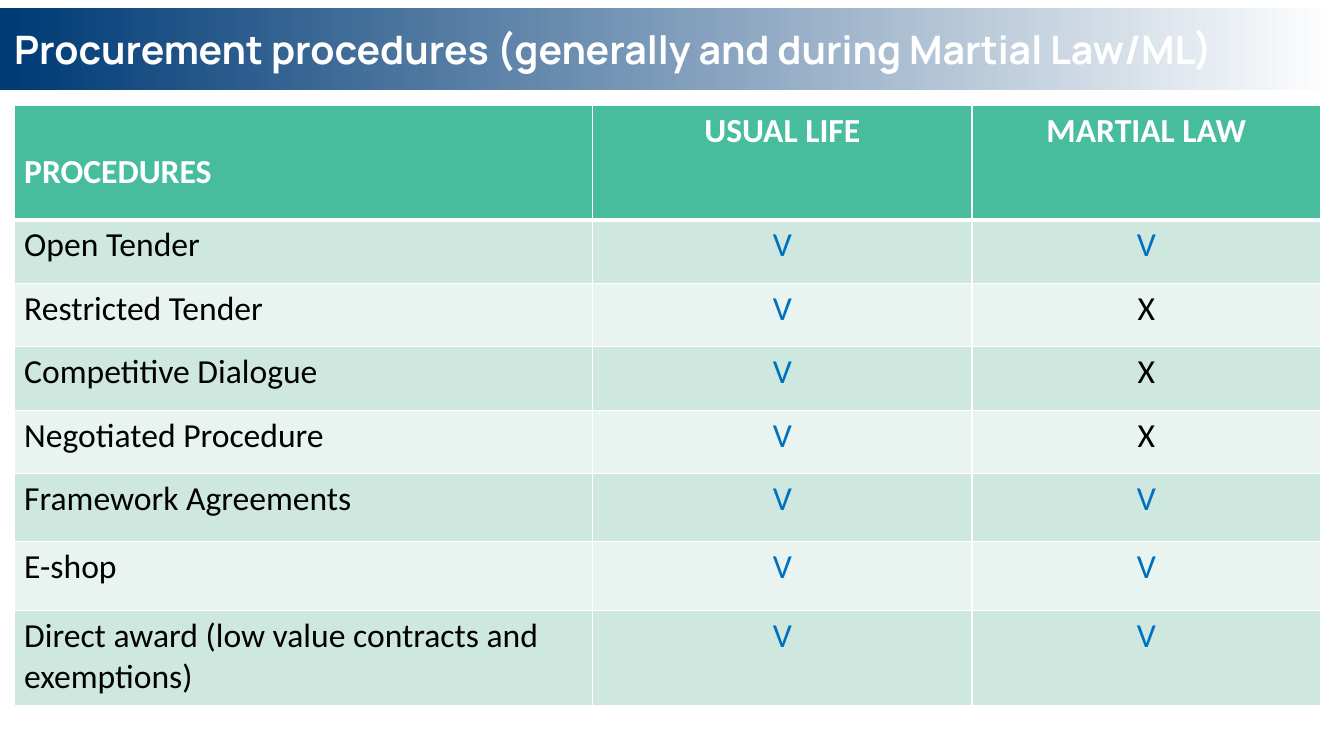
import pptx
import pptx.dml.color
import pptx.enum.shapes
import pptx.enum.text
import pptx.oxml
import pptx.oxml.ns
import pptx.util

RGBColor = pptx.dml.color.RGBColor
NAVY = RGBColor(0x00, 0x3B, 0x76)
WHITE = RGBColor(0xFF, 0xFF, 0xFF)
BLACK = RGBColor(0x00, 0x00, 0x00)
BLUE = RGBColor(0x00, 0x70, 0xC0)
GREEN = RGBColor(0x48, 0xBD, 0x9E)
MINT = RGBColor(0xCF, 0xE8, 0xDF)
PALE_MINT = RGBColor(0xE9, 0xF4, 0xF0)

EMU_PER_PX = 9144  # 100 px to the inch
COLUMN_WIDTHS = [574, 376, 346]
ROW_HEIGHTS = [113, 63, 63, 63, 63, 67, 69, 94]
HEADER = ["PROCEDURES", "USUAL LIFE", "MARTIAL LAW"]
PROCEDURES = [
    ["Open Tender", "V", "V"],
    ["Restricted Tender", "V", "X"],
    ["Competitive Dialogue", "V", "X"],
    ["Negotiated Procedure", "V", "X"],
    ["Framework Agreements", "V", "V"],
    ["E-shop", "V", "V"],
    ["Direct award (low value contracts and exemptions)", "V", "V"],
]


def px(length):
    return pptx.util.Emu(length * EMU_PER_PX)


def add_span(para, text, font, size, color, bold):
    span = para.add_run()
    span.text = text
    span.font.name = font
    span.font.size = pptx.util.Pt(size)
    span.font.color.rgb = color
    span.font.bold = bold


def add_title_band(page):
    """Add the fading band and put it behind the title."""
    band = page.shapes.add_shape(
        pptx.enum.shapes.MSO_SHAPE.RECTANGLE, px(-4), px(8), px(1333), px(81))
    band.shadow.inherit = False
    band.line.fill.background()
    band.fill.gradient()
    band.fill.gradient_angle = 0
    for stop, position, color in zip(
            band.fill.gradient_stops, (0.01, 1), (NAVY, WHITE)):
        stop.position = position
        stop.color.rgb = color
    page.shapes.title.element.addprevious(band.element)


def fill_title(page, text):
    title = page.shapes.title
    title.left, title.top, title.width, title.height = px(14), px(24), px(1255), px(48)
    frame = title.text_frame
    frame.auto_size = pptx.enum.text.MSO_AUTO_SIZE.NONE
    frame.word_wrap = True
    frame.vertical_anchor = pptx.enum.text.MSO_ANCHOR.MIDDLE
    frame.margin_left, frame.margin_right = 0, px(10)
    frame.margin_top = frame.margin_bottom = px(5)
    para = frame.paragraphs[0]
    para.alignment = pptx.enum.text.PP_ALIGN.LEFT
    add_span(para, text, "Manrope", 28, WHITE, True)


def set_borders(cell, top, bottom):
    """Draw white cell borders; top and bottom are widths in points."""
    properties = cell._tc.get_or_add_tcPr()
    for side, width in (("L", 1), ("R", 1), ("T", top), ("B", bottom)):
        properties.append(pptx.oxml.parse_xml(
            f'<a:ln{side} {pptx.oxml.ns.nsdecls("a")} w="{pptx.util.Pt(width)}">'
            f'<a:solidFill><a:srgbClr val="{WHITE}"/></a:solidFill></a:ln{side}>'))


def fill_cell(cell, text, row, column):
    set_borders(cell, 3 if row == 1 else 1, 3 if row == 0 else 1)
    cell.fill.solid()
    para = cell.text_frame.paragraphs[0]
    if column > 0:
        para.alignment = pptx.enum.text.PP_ALIGN.CENTER
    if row == 0:
        background, color = GREEN, WHITE
        if column == 0:
            cell.margin_top = px(45)
    else:
        background = MINT if row % 2 else PALE_MINT
        color = BLUE if text == "V" else BLACK
    cell.fill.fore_color.rgb = background
    add_span(para, text, "Calibri", 24, color, row == 0)


def add_procedure_table(page):
    rows = [HEADER] + PROCEDURES
    table = page.shapes.add_table(
        len(rows), len(HEADER), px(14), px(105),
        px(sum(COLUMN_WIDTHS)), px(sum(ROW_HEIGHTS))).table
    for column, width in zip(table.columns, COLUMN_WIDTHS):
        column.width = px(width)
    for row, height in zip(table.rows, ROW_HEIGHTS):
        row.height = px(height)
    for row, texts in enumerate(rows):
        for column, text in enumerate(texts):
            fill_cell(table.cell(row, column), text, row, column)


def main():
    deck = pptx.Presentation()
    deck.slide_width, deck.slide_height = px(1333), px(750)
    page = deck.slides.add_slide(deck.slide_layouts.get_by_name("Title Only"))
    fill_title(page, "Procurement procedures (generally and during Martial Law/ML)")
    add_title_band(page)
    add_procedure_table(page)
    deck.save("out.pptx")


if __name__ == "__main__":
    main()
